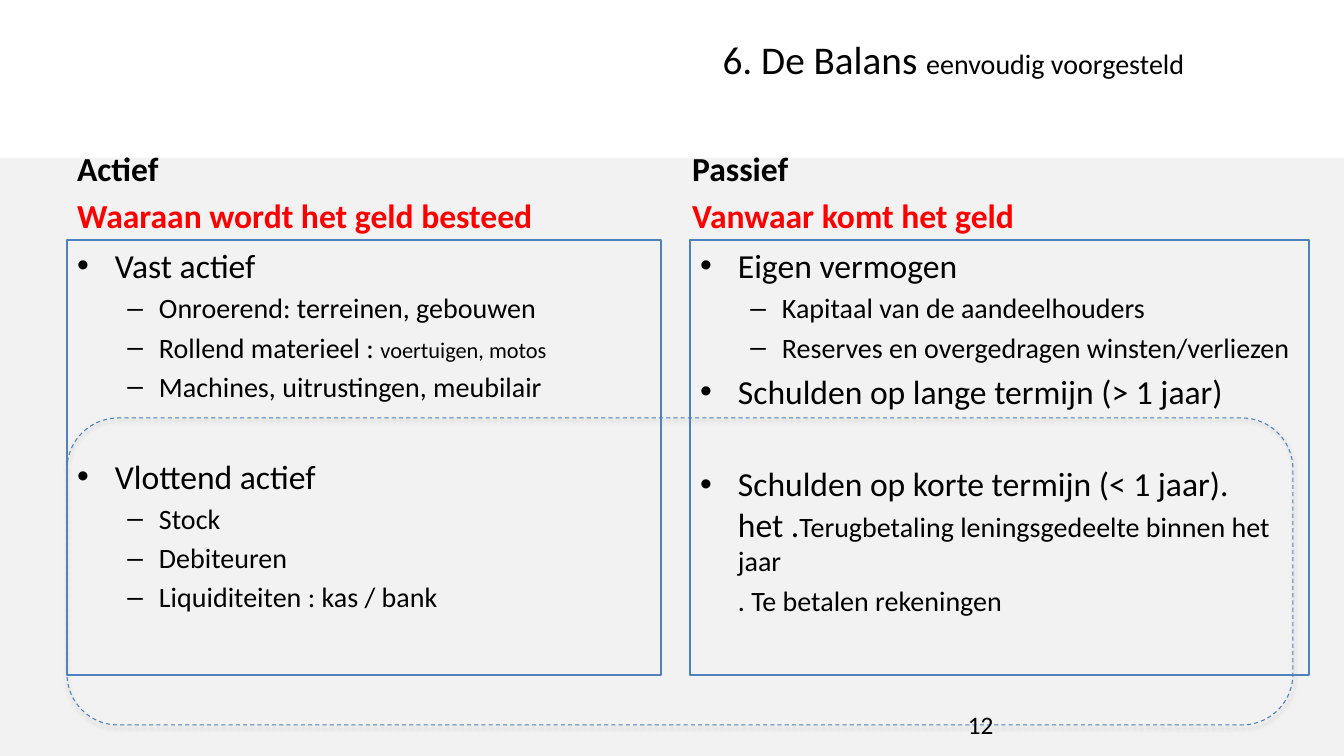
from lxml import etree
from pptx import Presentation
from pptx.dml.color import RGBColor
from pptx.enum.dml import MSO_LINE_DASH_STYLE as DASH
from pptx.enum.shapes import MSO_SHAPE as SHAPE
from pptx.enum.text import MSO_ANCHOR as ANCHOR, MSO_AUTO_SIZE as AUTO, PP_ALIGN as ALIGN
from pptx.oxml import parse_xml
from pptx.oxml.ns import qn
from pptx.util import Pt

PX = 914400 / 100.8


def place(sp, *box):
    sp.left, sp.top, sp.width, sp.height = [round(n * PX) for n in box]


def add_run(p, text, size, color="000000", bold=False):
    r = p.add_run()
    r.text = text
    r.font.name = "Calibri"
    r.font.size = Pt(size)
    r.font.bold = bold
    r.font.color.rgb = RGBColor.from_string(color)


prs = Presentation()
prs.slide_width, prs.slide_height = round(1344 * PX), round(756 * PX)
s = prs.slides.add_slide(prs.slide_layouts[4])
ph = {sp.placeholder_format.idx: sp for sp in s.placeholders}

panel = s.shapes.add_shape(SHAPE.RECTANGLE, 0, 0, 0, 0)
place(panel, 0, 158, 1344, 598)
panel.shadow.inherit = False
panel.fill.solid()
panel.fill.fore_color.rgb = RGBColor.from_string("F2F2F2")
panel.line.fill.background()

short_term = s.shapes.add_shape(SHAPE.ROUNDED_RECTANGLE, 0, 0, 0, 0)
place(short_term, 67, 418, 1226, 307)
short_term.fill.background()
short_term.line.color.rgb = RGBColor.from_string("4B7EBC")
short_term.line.width = Pt(0.75)
short_term.line.dash_style = DASH.DASH
short_term._element.spPr.append(parse_xml(
    '<a:effectLst xmlns:a="http://schemas.openxmlformats.org/drawingml/2006/main">'
    '<a:outerShdw blurRad="39370" dist="22860" dir="5400000" rotWithShape="0">'
    '<a:srgbClr val="000000"><a:alpha val="35000"/></a:srgbClr>'
    '</a:outerShdw></a:effectLst>'))

for i, sp in enumerate([panel, short_term]):
    s.shapes._spTree.insert(2 + i, sp._element)

title = s.shapes.title
place(title, 630, 30, 647, 57)
tf = title.text_frame
tf.auto_size = AUTO.NONE
p = tf.paragraphs[0]
p.alignment = ALIGN.CENTER
add_run(p, "6. De Balans ", 28)
add_run(p, "eenvoudig voorgesteld", 20)

headings = [
    (1, 67, "Actief", "Waaraan wordt het geld besteed"),
    (3, 682, "Passief", "Vanwaar komt het geld"),
]
for idx, left, side, question in headings:
    place(ph[idx], left, 169, 594, 71)
    tf = ph[idx].text_frame
    tf.auto_size = AUTO.NONE
    tf.vertical_anchor = ANCHOR.BOTTOM
    add_run(tf.paragraphs[0], side, 24, bold=True)
    add_run(tf.add_paragraph(), question, 24, "FF0000", True)

assets = [
    (0, [("Vast actief", 24)]),
    (1, [("Onroerend: terreinen, gebouwen", 20)]),
    (1, [("Rollend materieel : ", 20), ("voertuigen, motos", 16)]),
    (1, [("Machines, uitrustingen, meubilair", 20)]),
    (0, [("Vlottend actief", 24)]),
    (1, [("Stock", 20)]),
    (1, [("Debiteuren", 20)]),
    (1, [("Liquiditeiten : kas / bank", 20)]),
]
liabilities = [
    (0, [("Eigen vermogen", 24)]),
    (1, [("Kapitaal van de aandeelhouders", 20)]),
    (1, [("Reserves en overgedragen winsten/verliezen", 20)]),
    (0, [("Schulden op lange termijn (> 1 jaar)", 24)]),
    (0, [("Schulden op korte termijn (< 1 jaar).", 24), None, ("het .", 24),
         ("Terugbetaling leningsgedeelte binnen het jaar", 20)]),
    (0, [(". Te betalen rekeningen", 20)]),
]
for idx, left, width, items in [(2, 67, 594, assets), (4, 690, 619, liabilities)]:
    place(ph[idx], left, 240, width, 435)
    ph[idx].line.color.rgb = RGBColor.from_string("4F81BD")
    ph[idx].line.width = Pt(1.25)
    tf = ph[idx].text_frame
    tf.auto_size = AUTO.NONE
    for i, (level, runs) in enumerate(items):
        p = tf.paragraphs[0] if i == 0 else tf.add_paragraph()
        p.level = level
        if i == 4:
            p.space_before = Pt(37.5)
        for run in runs:
            if run:
                add_run(p, *run)
            else:
                p.add_line_break()

pPr = p._p.get_or_add_pPr()
pPr.set("indent", "0")
etree.SubElement(pPr, qn("a:buNone"))

number = s.shapes.add_textbox(0, 0, 0, 0)
place(number, 958, 704, 313, 40)
number.text_frame.word_wrap = True
add_run(number.text_frame.paragraphs[0], "12", 18)

prs.save("out.pptx")
